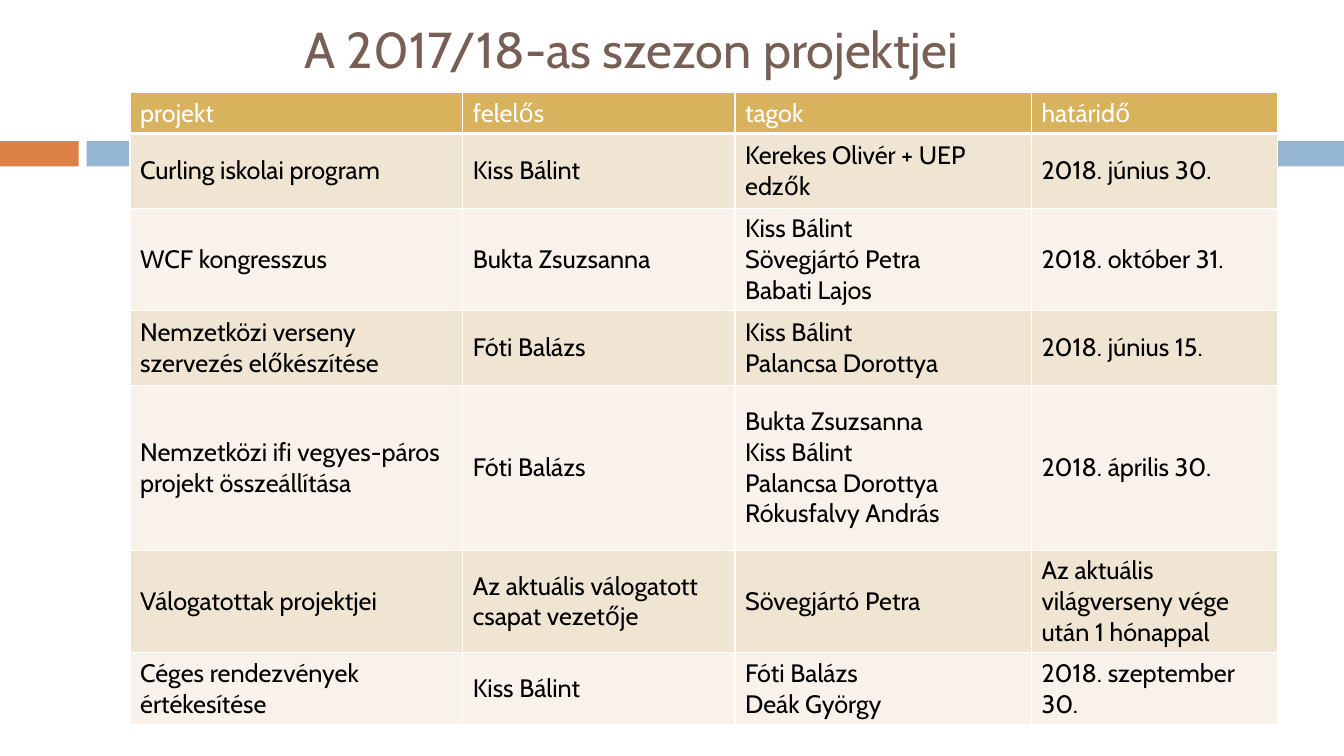
"""Build the slide listing the projects of the 2017/18 season."""
from lxml.etree import SubElement
from pptx import Presentation
from pptx.dml.color import RGBColor
from pptx.enum.shapes import MSO_SHAPE
from pptx.enum.text import MSO_ANCHOR, PP_ALIGN
from pptx.oxml.ns import qn
from pptx.util import Inches, Pt

TITLE = "A 2017/18-as szezon projektjei"
ROWS = [
    ("projekt", "felelős", "tagok", "határidő"),
    ("Curling iskolai program", "Kiss Bálint", "Kerekes Olivér + UEP edzők", "2018. június 30."),
    ("WCF kongresszus", "Bukta Zsuzsanna",
     "Kiss Bálint\nSövegjártó Petra\nBabati Lajos", "2018. október 31."),
    ("Nemzetközi verseny szervezés előkészítése", "Fóti Balázs",
     "Kiss Bálint\nPalancsa Dorottya", "2018. június 15."),
    ("Nemzetközi ifi vegyes-páros projekt összeállítása", "Fóti Balázs",
     "Bukta Zsuzsanna\nKiss Bálint\nPalancsa Dorottya\nRókusfalvy András", "2018. április 30."),
    ("Válogatottak projektjei", "Az aktuális válogatott csapat vezetője",
     "Sövegjártó Petra", "Az aktuális világverseny vége után 1 hónappal"),
    ("Céges rendezvények értékesítése", "Kiss Bálint",
     "Fóti Balázs\nDeák György", "2018. szeptember 30."),
]
COLUMN_WIDTHS = (3.3, 2.7, 2.94, 2.44)
ROW_HEIGHTS = (0.3, 0.74, 0.97, 0.74, 1.64, 0.97, 0.52)
BARS = [(0, 0.78, "DD8047"), (0.86, 12.47, "94B6D2")]
HEADER_FILL, BAND_FILLS = "D8B25C", ("F8F2EA", "F0E4D2")
WHITE, BLACK = "FFFFFF", "000000"
TITLE_FORMAT = {"name": "Cabin", "size": Pt(36), "bold": False}
CELL_FORMAT = {"name": "Cabin", "size": Pt(18), "bold": False}


def color(value):
    return RGBColor.from_string(value)


def format_text(text_frame, font_format, font_color):
    for paragraph in text_frame.paragraphs:
        paragraph.alignment = PP_ALIGN.LEFT
        for run in paragraph.runs:
            for name, value in font_format.items():
                setattr(run.font, name, value)
            run.font.color.rgb = color(font_color)


def add_borders(cell, widths):
    properties = cell._tc.get_or_add_tcPr()
    for side, width in widths.items():
        line = SubElement(properties, qn(f"a:ln{side}"), w=str(Pt(width)))
        SubElement(SubElement(line, qn("a:solidFill")), qn("a:srgbClr"), val=WHITE)


def add_bars(slide):
    for left, width, fill in BARS:
        bar = slide.shapes.add_shape(
            MSO_SHAPE.RECTANGLE, Inches(left), Inches(1.4), Inches(width), Inches(0.25))
        bar.shadow.inherit = False
        bar.fill.solid()
        bar.fill.fore_color.rgb = color(fill)
        bar.line.fill.background()


def add_title(slide):
    title = slide.shapes.title
    title.left, title.top, title.width, title.height = map(Inches, (2.92, 0, 7.88, 0.95))
    title.text_frame.text = TITLE
    title.text_frame.vertical_anchor = MSO_ANCHOR.MIDDLE
    format_text(title.text_frame, TITLE_FORMAT, "775F55")


def add_project_table(slide):
    table = slide.shapes.add_table(
        len(ROWS), len(COLUMN_WIDTHS), Inches(1.29), Inches(0.92),
        Inches(sum(COLUMN_WIDTHS)), Inches(sum(ROW_HEIGHTS))).table
    for column, width in zip(table.columns, COLUMN_WIDTHS):
        column.width = Inches(width)
    for row_index, (row, height, texts) in enumerate(zip(table.rows, ROW_HEIGHTS, ROWS)):
        row.height = Inches(height)
        is_header = row_index == 0
        fill = HEADER_FILL if is_header else BAND_FILLS[row_index % 2]
        for cell, text in zip(row.cells, texts):
            cell.text = text
            cell.vertical_anchor = MSO_ANCHOR.MIDDLE
            format_text(cell.text_frame, CELL_FORMAT, WHITE if is_header else BLACK)
            add_borders(cell, {"L": 1, "R": 1, "T": 1, "B": 3 if is_header else 1})
            cell.fill.solid()
            cell.fill.fore_color.rgb = color(fill)


def main():
    presentation = Presentation()
    presentation.slide_width, presentation.slide_height = Inches(13.33), Inches(7.5)
    slide = presentation.slides.add_slide(presentation.slide_layouts[5])
    add_bars(slide)
    add_title(slide)
    add_project_table(slide)
    presentation.save("out.pptx")


if __name__ == "__main__":
    main()
